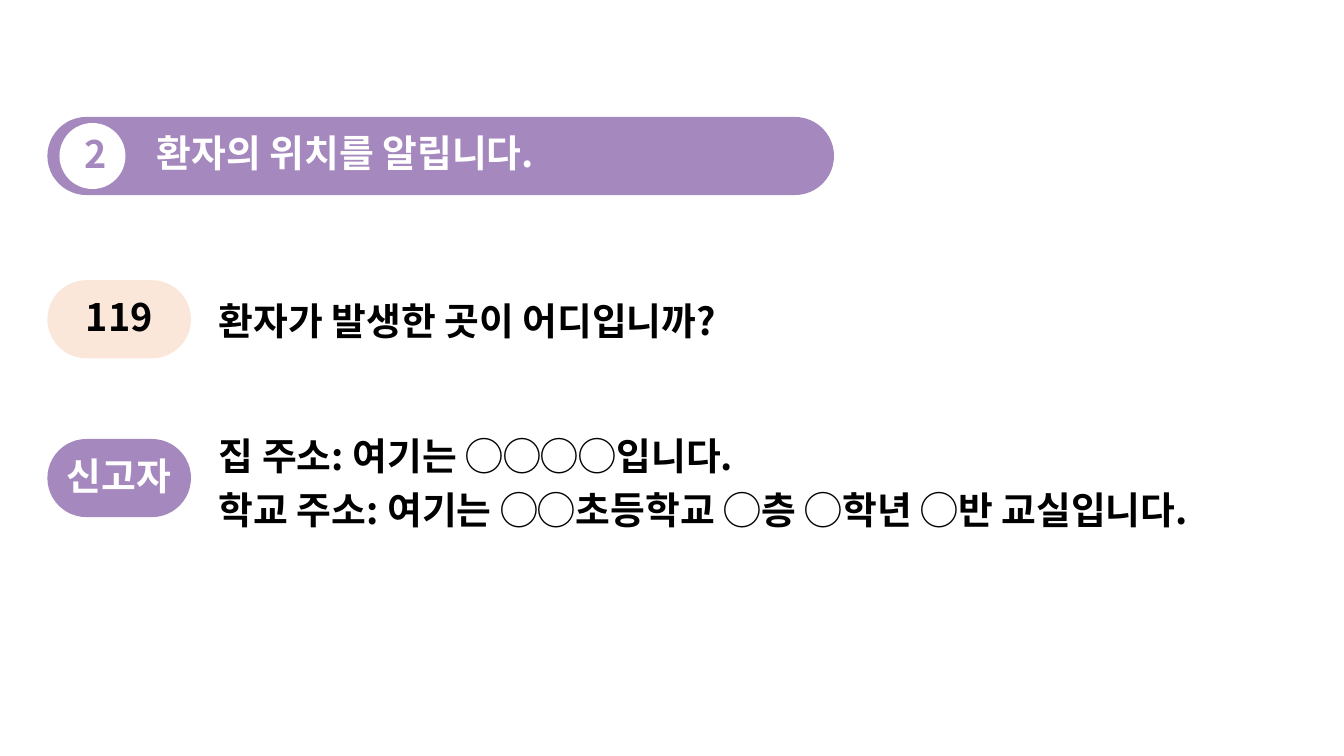
"""Build the emergency call slide about reporting the patient's location."""
from lxml import etree
from pptx import Presentation
from pptx.dml.color import RGBColor
from pptx.enum import shapes, text
from pptx.oxml import ns
from pptx.util import Inches, Pt

PURPLE = RGBColor(0xA5, 0x88, 0xBD)
PEACH = RGBColor(0xFA, 0xE7, 0xDA)
WHITE = RGBColor(0xFF, 0xFF, 0xFF)
BLACK = RGBColor(0, 0, 0)
FONT = "Noto Sans CJK KR"

NUMBER, HEADING = "2", "환자의 위치를 알립니다."
DIALOGUE = [
    {"speaker": "119", "fill": PEACH, "color": BLACK, "top": 5.56,
     "label_width": 1.66, "speech_box": (5.66, 12.04, 1.2),
     "speech": ["환자가 발생한 곳이 어디입니까?"]},
    {"speaker": "신고자", "fill": PURPLE, "color": WHITE, "top": 8.71,
     "label_width": 2.24, "speech_box": (8.34, 20.92, 2.29),
     "speech": ["집 주소: 여기는 ◯◯◯◯입니다.",
                "학교 주소: 여기는 ◯◯초등학교 ◯층 ◯학년 ◯반 교실입니다."]},
]

LEFT, SPEECH_LEFT = 0.94, 4.28
PILL_WIDTH, PILL_HEIGHT = 2.85, 1.55
LABEL_HEIGHT = 0.93
LABEL_OFFSET = (PILL_HEIGHT - LABEL_HEIGHT) / 2


def add_filled(parent, kind, box, fill):
    shape = parent.add_shape(kind, *map(Inches, box))
    shape.shadow.inherit = False
    shape.fill.solid()
    shape.fill.fore_color.rgb = fill
    shape.line.fill.background()
    return shape


def add_pill(parent, box, fill):
    add_filled(parent, shapes.MSO_SHAPE.ROUNDED_RECTANGLE, box, fill).adjustments[0] = 0.5


def add_text(parent, lines, box, color=BLACK, centered=False, spacing=0.9):
    frame = parent.add_textbox(*map(Inches, box)).text_frame
    frame.word_wrap = not centered
    frame.auto_size = text.MSO_AUTO_SIZE.SHAPE_TO_FIT_TEXT
    frame.vertical_anchor = text.MSO_ANCHOR.MIDDLE
    frame.margin_left = frame.margin_right = Inches(0.06)
    frame.margin_top = frame.margin_bottom = Inches(0.06)
    for index, line in enumerate(lines):
        paragraph = frame.add_paragraph() if index else frame.paragraphs[0]
        paragraph.alignment = text.PP_ALIGN.CENTER if centered else text.PP_ALIGN.LEFT
        paragraph.line_spacing = spacing
        run = paragraph.add_run()
        run.text = line
        run.font.name, run.font.size, run.font.bold = FONT, Pt(54), True
        run.font.color.rgb = color
        east_asian = etree.SubElement(run.font._element, ns.qn("a:ea"))
        east_asian.set("typeface", FONT)


def add_heading(parent):
    add_pill(parent, (LEFT, 2.32, 15.61, PILL_HEIGHT), PURPLE)
    add_text(parent, [HEADING], (3.05, 2.61, 10.15, LABEL_HEIGHT), color=WHITE)
    add_filled(parent, shapes.MSO_SHAPE.OVAL, (1.18, 2.44, 1.31, 1.31), WHITE)
    add_text(parent, [NUMBER], (1.62, 2.63, 0.44, LABEL_HEIGHT), color=PURPLE, centered=True)


def add_turn(parent, turn):
    top, label_width = turn["top"], turn["label_width"]
    add_pill(parent, (LEFT, top, PILL_WIDTH, PILL_HEIGHT), turn["fill"])
    label_left = LEFT + (PILL_WIDTH - label_width) / 2
    add_text(parent, [turn["speaker"]],
             (label_left, top + LABEL_OFFSET, label_width, LABEL_HEIGHT),
             color=turn["color"], centered=True)
    add_text(parent, turn["speech"], (SPEECH_LEFT, *turn["speech_box"]), spacing=1.2)


def main():
    presentation = Presentation()
    presentation.slide_width, presentation.slide_height = Inches(26.67), Inches(15)
    slide = presentation.slides.add_slide(presentation.slide_layouts[6])
    add_heading(slide.shapes)
    for turn in DIALOGUE:
        add_turn(slide.shapes.add_group_shape().shapes, turn)
    presentation.save("out.pptx")


if __name__ == "__main__":
    main()
